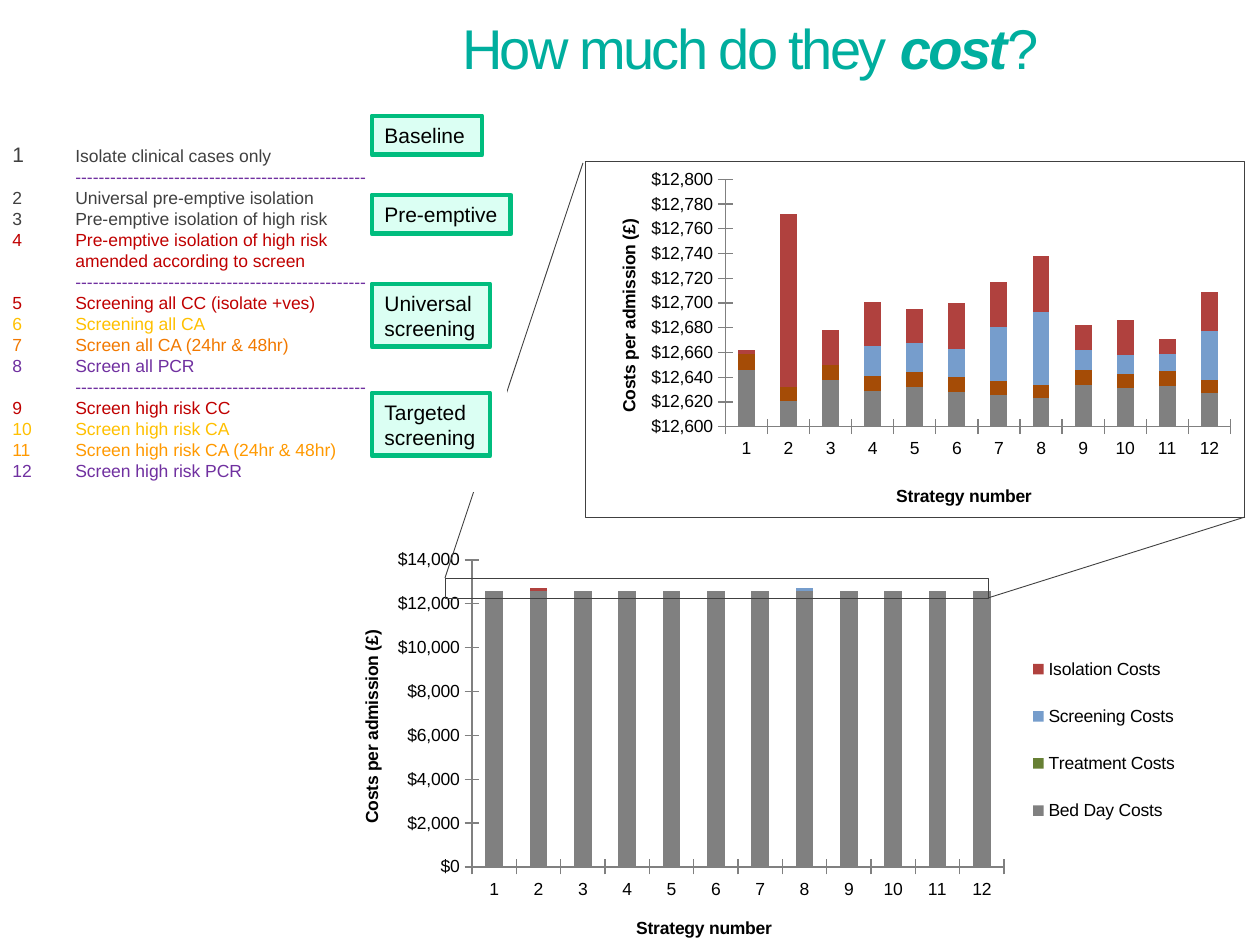
from lxml import etree
from pptx import Presentation
from pptx.chart.data import CategoryChartData
from pptx.dml.color import RGBColor
from pptx.enum.chart import XL_CHART_TYPE, XL_LEGEND_POSITION, XL_TICK_MARK
from pptx.enum.shapes import MSO_CONNECTOR, MSO_SHAPE
from pptx.enum.text import MSO_ANCHOR, MSO_AUTO_SIZE, PP_ALIGN
from pptx.oxml.ns import qn
from pptx.util import Inches, Pt

STACKED = XL_CHART_TYPE.COLUMN_STACKED
RIGHT = XL_LEGEND_POSITION.RIGHT
CROSS = XL_TICK_MARK.CROSS
RECT = MSO_SHAPE.RECTANGLE
STRAIGHT = MSO_CONNECTOR.STRAIGHT
TOP, MIDDLE = MSO_ANCHOR.TOP, MSO_ANCHOR.MIDDLE
LEFT = PP_ALIGN.LEFT
NO_FIT = MSO_AUTO_SIZE.NONE

FONT = "Arial"
BLACK = RGBColor(0x00, 0x00, 0x00)
WHITE = RGBColor(0xFF, 0xFF, 0xFF)
DARK = RGBColor(0x40, 0x40, 0x40)
GRAY = RGBColor(0x80, 0x80, 0x80)
TEAL = RGBColor(0x00, 0xAE, 0x9E)
MINT = RGBColor(0xDB, 0xFF, 0xF3)
GREEN = RGBColor(0x00, 0xBD, 0x7E)
OLIVE = RGBColor(0x67, 0x80, 0x34)
BROWN = RGBColor(0xA5, 0x4C, 0x06)
BLUE = RGBColor(0x76, 0x9D, 0xCC)
BRICK = RGBColor(0xB0, 0x41, 0x3E)
RED = RGBColor(0xC0, 0x00, 0x00)
YELLOW = RGBColor(0xFF, 0xC0, 0x00)
ORANGE = RGBColor(0xF2, 0x79, 0x00)
AMBER = RGBColor(0xFF, 0x99, 0x00)
PURPLE = RGBColor(0x70, 0x30, 0xA0)

DASHES = "\t" + "-" * 50
STRATEGIES = [
    (DASHES, PURPLE),
    ("2\tUniversal pre-emptive isolation", DARK),
    ("3\tPre-emptive isolation of high risk", DARK),
    ("4\tPre-emptive isolation of high risk", RED),
    ("\tamended according to screen", RED),
    (DASHES, PURPLE),
    ("5\tScreening all CC (isolate +ves)", RED),
    ("6\tScreening all CA", YELLOW),
    ("7\tScreen all CA (24hr & 48hr)", ORANGE),
    ("8\tScreen all PCR", PURPLE),
    (DASHES, PURPLE),
    ("9\tScreen high risk CC", RED),
    ("10\tScreen high risk CA", YELLOW),
    ("11\tScreen high risk CA (24hr & 48hr)", AMBER),
]
GROUPS = [
    ("Baseline", (372, 116, 110, 39)),
    ("Pre-emptive", (372, 195, 139, 39)),
    ("Universal screening", (372, 284, 118, 63)),
    ("Targeted screening", (372, 393, 118, 63)),
]
TOTAL_SERIES = [
    ("Bed Day Costs", [12600] * 12, GRAY),
    ("Treatment Costs", [0] * 12, OLIVE),
    ("Screening Costs", [0] * 7 + [100] + [0] * 4, BLUE),
    ("Isolation Costs", [0, 100] + [0] * 10, BRICK),
]
DETAIL_SERIES = [
    ("Series 1", [12646, 12621, 12638, 12629, 12632, 12628,
                  12626, 12623, 12634, 12631, 12633, 12627], GRAY),
    ("Series 2", [13, 11, 12, 12, 12, 12, 11, 11, 12, 12, 12, 11], BROWN),
    ("Series 3", [0, 0, 0, 24, 24, 23, 44, 59, 16, 15, 14, 39], BLUE),
    ("Series 4", [3, 140, 28, 36, 27, 37, 36, 45, 20, 28, 12, 32], BRICK),
]


def px(*values):
    """Turn pixel lengths into EMU."""
    return [round(v * Inches(1) / 126) for v in values]


def add_run(p, text, size=10, color=BLACK, bold=False, italic=False, spacing=None):
    """Append a formatted run to a paragraph."""
    r = p.add_run()
    r.text = text
    f = r.font
    f.name, f.size, f.bold, f.italic = FONT, Pt(size), bold, italic
    f.color.rgb = color
    if spacing is not None:
        f._element.set("spc", str(spacing))


def add_box(slide, box, fill=None, line=None, width=0.5):
    """Add a plain rectangle with left-aligned, wrapping text."""
    sp = slide.shapes.add_shape(RECT, *px(*box))
    sp.shadow.inherit = False
    if fill is None:
        sp.fill.background()
    else:
        sp.fill.solid()
        sp.fill.fore_color.rgb = fill
    if line is None:
        sp.line.fill.background()
    else:
        sp.line.color.rgb = line
        sp.line.width = Pt(width)
    sp.text_frame.word_wrap = True
    sp.text_frame.paragraphs[0].alignment = LEFT
    return sp


def add_title(slide, box):
    """Place and fill the title placeholder."""
    sp = slide.shapes.title
    sp.left, sp.top, sp.width, sp.height = px(*box)
    tf = sp.text_frame
    tf.auto_size, tf.vertical_anchor = NO_FIT, TOP
    tf.margin_left, tf.margin_right, tf.margin_top, tf.margin_bottom = px(10, 10, 14, 10)
    p = tf.paragraphs[0]
    p.alignment = LEFT
    for text, strong in (("How much do they ", False), ("cost", True), ("?", False)):
        add_run(p, text, size=32, color=TEAL, bold=strong, italic=strong, spacing=-150)


def set_layout(parent, index, chart_box, box, inner=False):
    """Fix a chart part at a box given in slide pixels."""
    for old in parent.findall(qn("c:layout")):
        parent.remove(old)
    layout = etree.Element(qn("c:layout"))
    manual = etree.SubElement(layout, qn("c:manualLayout"))
    left, top, width, height = chart_box
    values = [("xMode", "edge"), ("yMode", "edge"),
              ("x", (box[0] - left) / width), ("y", (box[1] - top) / height)]
    if inner:
        values.insert(0, ("layoutTarget", "inner"))
    if len(box) == 4:
        values += [("w", box[2] / width), ("h", box[3] / height)]
    for tag, value in values:
        etree.SubElement(manual, qn("c:" + tag)).set("val", str(value))
    parent.insert(index, layout)


def add_cost_chart(slide, box, series, plot, titles, low, high, step):
    """Add a stacked column chart of costs by strategy."""
    data = CategoryChartData()
    data.categories = [str(n) for n in range(1, 13)]
    for name, values, _ in series:
        data.add_series(name, values)
    chart = slide.shapes.add_chart(STACKED, *px(*box), data).chart
    chart.has_title = chart.has_legend = False
    chart.font.name, chart.font.size = FONT, Pt(10)
    chart.font.color.rgb = BLACK
    bars = chart.plots[0]
    bars.gap_width, bars.overlap, bars.vary_by_categories = 150, 100, False
    for ser, (_, _, color) in zip(bars.series, series):
        ser.format.fill.solid()
        ser.format.fill.fore_color.rgb = color
    names = ("Strategy number", "Costs per admission (£)")
    for axis, name, spot in zip((chart.category_axis, chart.value_axis), names, titles):
        axis.has_major_gridlines = False
        axis.major_tick_mark = CROSS
        axis.format.line.color.rgb = GRAY
        title = axis.axis_title
        add_run(title.text_frame.paragraphs[0], name, bold=True)
        set_layout(title._element, 1, box, spot)
    title._element.xpath(".//a:bodyPr")[0].set("rot", "-5400000")
    axis.minimum_scale, axis.maximum_scale, axis.major_unit = low, high, step
    axis.tick_labels.number_format = '"$"#,##0'
    axis.tick_labels.number_format_is_linked = False
    set_layout(chart._chartSpace.chart.plotArea, 0, box, plot, inner=True)
    return chart


def add_legend(chart, chart_box, box):
    """Show the legend on the right of the chart."""
    chart.has_legend = True
    chart.legend.position = RIGHT
    chart.legend.include_in_layout = False
    set_layout(chart.legend._element, 1, chart_box, box)


def add_chart_border(chart):
    """Draw a thin frame round the chart."""
    sp_pr = etree.Element(qn("c:spPr"))
    etree.SubElement(sp_pr, qn("a:noFill"))
    ln = etree.SubElement(sp_pr, qn("a:ln"), w=str(Pt(0.5)))
    fill = etree.SubElement(ln, qn("a:solidFill"))
    etree.SubElement(fill, qn("a:srgbClr"), val=str(DARK))
    chart._chartSpace.chart.addnext(sp_pr)


def add_zoom_line(slide, *ends):
    """Add a thin line from the marked band to the detail chart."""
    cn = slide.shapes.add_connector(STRAIGHT, *px(*ends))
    cn.line.color.rgb = DARK
    cn.line.width = Pt(0.5)
    etree.SubElement(cn._element.spPr, qn("a:effectLst"))


def add_strategy_list(slide, box):
    """Add the numbered list of strategies."""
    tf = add_box(slide, box, fill=WHITE).text_frame
    tf.vertical_anchor = TOP
    p = tf.paragraphs[0]
    add_run(p, "1\t", size=12, color=DARK)
    add_run(p, "Isolate clinical cases only", color=DARK)
    for text, color in STRATEGIES + [("Screen high risk PCR", PURPLE)]:
        p = tf.add_paragraph()
        p.alignment, p.line_spacing = LEFT, Pt(12)
        add_run(p, text, color=color)
    for item in tf.paragraphs:
        p_pr = item._p.get_or_add_pPr()
        p_pr.set("marL", str(Inches(0.5)))
        p_pr.set("indent", str(-Inches(0.5)))
    etree.SubElement(p_pr, qn("a:buAutoNum"), type="arabicPlain", startAt="12")


def add_group_label(slide, text, box):
    """Add a green label naming a group of strategies."""
    tf = add_box(slide, box, fill=MINT, line=GREEN, width=2.75).text_frame
    tf.vertical_anchor = MIDDLE
    add_run(tf.paragraphs[0], text, size=12)


def main():
    """Build the slide and save it."""
    prs = Presentation()
    prs.slide_width, prs.slide_height = px(1260, 945)
    slide = prs.slides.add_slide(prs.slide_layouts[5])
    add_title(slide, (452, 0, 808, 136))
    total_box, detail_box = (329, 542, 857, 417), (585, 161, 660, 357)
    total = add_cost_chart(slide, total_box, TOTAL_SERIES, (472, 560, 532, 307),
                           [(633, 913), (357, 627)], 0, 14000, 2000)
    add_legend(total, total_box, (1026, 632, 156, 216))
    detail = add_cost_chart(slide, detail_box, DETAIL_SERIES, (725, 179, 506, 248),
                            [(893, 482), (614, 216)], 12600, 12800, 20)
    add_chart_border(detail)
    add_box(slide, (445, 578, 544, 20), line=DARK)
    add_zoom_line(slide, 988, 598, 1245, 517)
    add_zoom_line(slide, 445, 578, 583, 163)
    add_strategy_list(slide, (0, 135, 507, 357))
    for text, box in GROUPS:
        add_group_label(slide, text, box)
    prs.save("out.pptx")


if __name__ == "__main__":
    main()
